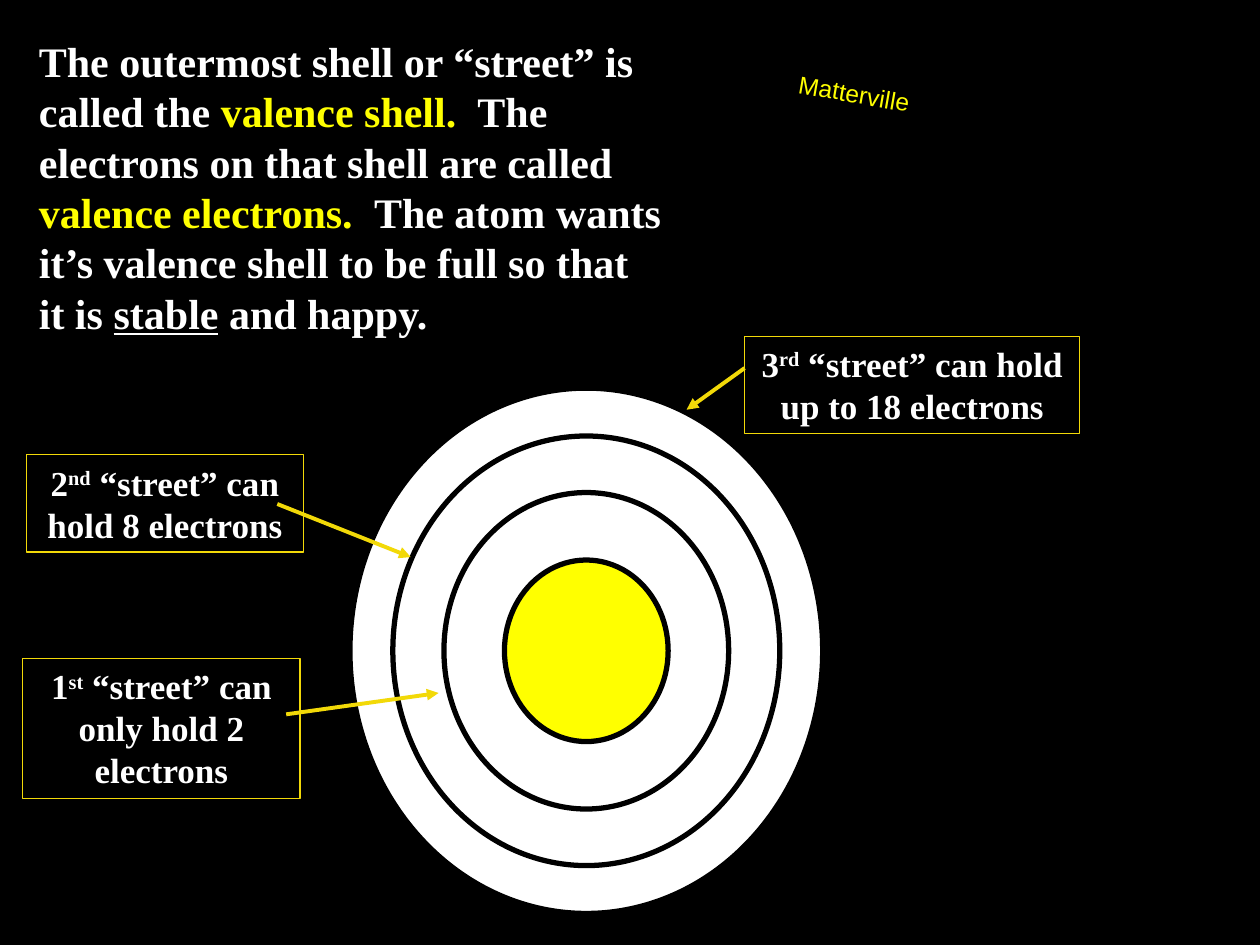
from lxml.etree import SubElement
from pptx import Presentation
from pptx.dml.color import RGBColor as RGB
from pptx.enum.shapes import MSO_CONNECTOR as CONN, MSO_SHAPE as SHAPE
from pptx.enum.text import MSO_ANCHOR as ANCHOR, MSO_AUTO_SIZE as AUTO, PP_ALIGN as ALIGN
from pptx.oxml.ns import qn
from pptx.util import Cm, Pt


class Theme:
    black = RGB(0x00, 0x00, 0x00)
    white = RGB(0xFF, 0xFF, 0xFF)
    yellow = RGB(0xFF, 0xFF, 0x00)
    gold = RGB(0xF2, 0xD9, 0x08)
    serif, sans = "Times New Roman", "Arial"
    title, label, sign = Pt(24), Pt(20), Pt(14)
    ring_line, box_line, arrow_line = Pt(3), Pt(0.75), Pt(2.25)


def add_run(p, text, size, color=Theme.white, font=Theme.serif, bold=True):
    r = p.add_run()
    r.text = text
    r.font.name, r.font.size, r.font.bold = font, size, bold
    r.font.color.rgb = color
    return r


def add_filled(shapes, kind, box, fill, line, width):
    sp = shapes.add_shape(kind, *[Cm(v) for v in box])
    sp.shadow.inherit = False
    sp.fill.solid()
    sp.fill.fore_color.rgb = fill
    sp.line.color.rgb, sp.line.width = line, width
    return sp


prs = Presentation()
prs.slide_width, prs.slide_height = Cm(25.4), Cm(19.05)
s = prs.slides.add_slide(prs.slide_layouts[5])
s.background.fill.solid()
s.background.fill.fore_color.rgb = Theme.black

# Explanation
title = s.shapes.title
title.left, title.top, title.width, title.height = Cm(0.53), Cm(0.56), Cm(13.11), Cm(6.4)
tf = title.text_frame
tf.word_wrap, tf.auto_size, tf.vertical_anchor = True, AUTO.NONE, ANCHOR.MIDDLE
p = tf.paragraphs[0]
p.alignment = ALIGN.LEFT
for text, color, underline in [
    ("The outermost shell or “street” is called the ", Theme.white, False),
    ("valence shell.  ", Theme.yellow, False),
    ("The electrons on that shell are called ", Theme.white, False),
    ("valence electrons.  ", Theme.yellow, False),
    ("The atom wants it’s valence shell to be full so that it is ", Theme.white, False),
    ("stable", Theme.white, True),
    (" and happy.", Theme.white, False),
]:
    add_run(p, text, Theme.title, color).font.underline = underline

# Town sign
sign = s.shapes.add_textbox(Cm(15.6), Cm(1.9), Cm(8.08), Cm(3.18))
sign.rotation = 10
sign.text_frame.word_wrap = True
add_run(sign.text_frame.paragraphs[0], "Matterville", Theme.sign, Theme.yellow, Theme.sans, False)

# Concentric shells around the nucleus, outermost first
center_x, center_y = 11.82, 13.12
shells = s.shapes.add_group_shape()
for parent, w, h, fill in [
    (shells, 9.53, 10.59, Theme.white),
    (shells, 7.8, 8.66, Theme.white),
    (shells, 5.74, 6.38, Theme.white),
    (s, 3.3, 3.66, Theme.yellow),
]:
    box = (center_x - w / 2, center_y - h / 2, w, h)
    add_filled(parent.shapes, SHAPE.OVAL, box, fill, Theme.black, Theme.ring_line)

# Callouts: number, ordinal, wording, box, arrow from and to
for number, ordinal, wording, box, arrow in [
    ("2", "nd", " “street” can hold 8 electrons",
     (0.53, 9.17, 5.59, 1.96), (5.59, 10.16, 8.28, 11.23)),
    ("3", "rd", " “street” can hold up to 18 electrons",
     (15.01, 6.78, 6.76, 1.96), (15.01, 7.42, 13.84, 8.26)),
    ("1", "st", " “street” can only hold 2 electrons",
     (0.46, 13.28, 5.59, 2.82), (5.77, 14.4, 8.84, 13.97)),
]:
    callout = s.shapes.add_group_shape()
    sp = add_filled(callout.shapes, SHAPE.RECTANGLE, box, Theme.black, Theme.gold, Theme.box_line)
    tf = sp.text_frame
    tf.word_wrap, tf.vertical_anchor = True, ANCHOR.TOP
    p = tf.paragraphs[0]
    p.alignment = ALIGN.CENTER
    add_run(p, number, Theme.label)
    r = add_run(p, ordinal, Theme.label)
    r.font._element.set("baseline", "30000")
    add_run(p, wording, Theme.label)

    line = callout.shapes.add_connector(CONN.STRAIGHT, *[Cm(v) for v in arrow])
    line.line.color.rgb, line.line.width = Theme.gold, Theme.arrow_line
    SubElement(line.line._get_or_add_ln(), qn("a:tailEnd"), type="triangle")
    SubElement(line._element.spPr, qn("a:effectLst"))

prs.save("out.pptx")
